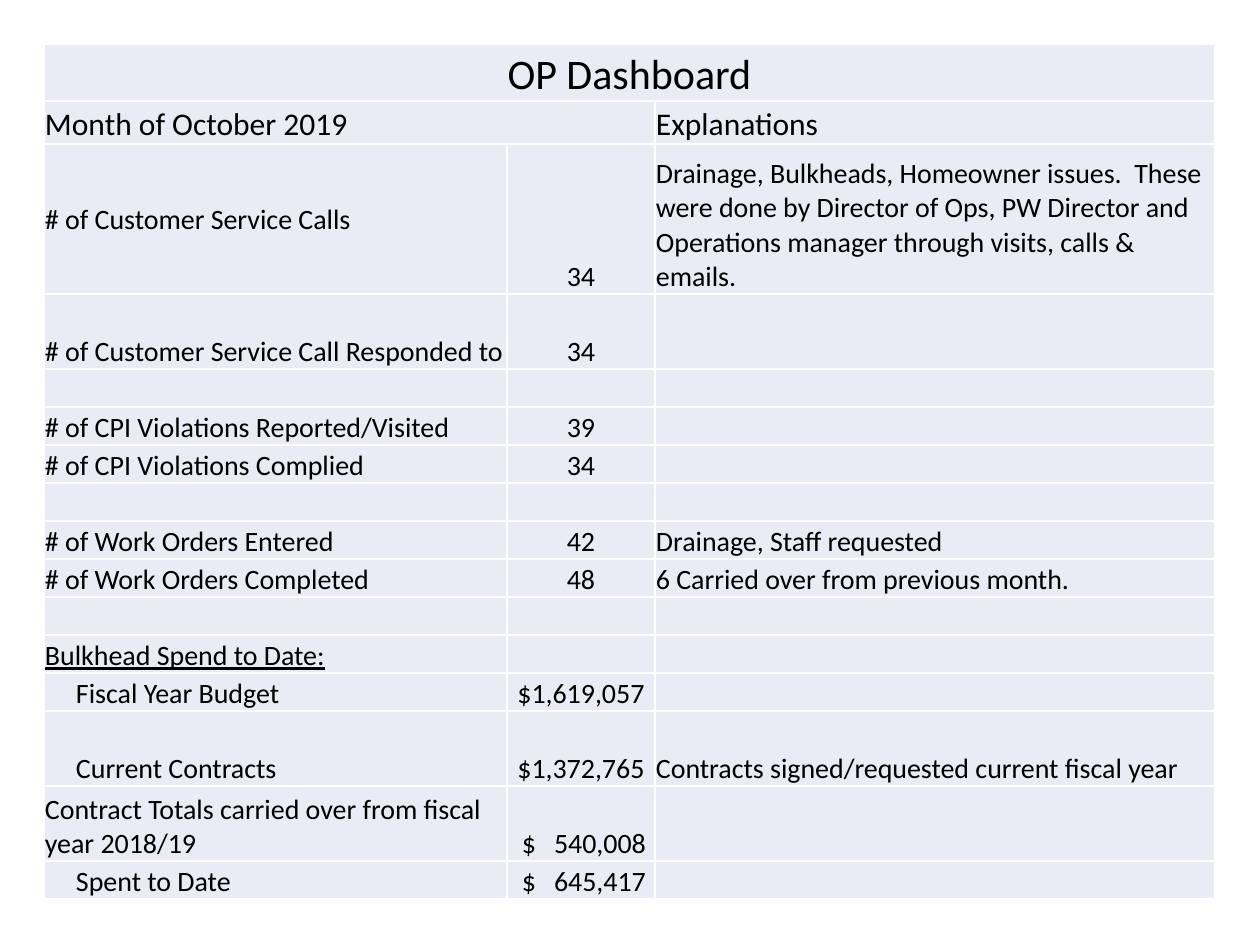
"""Build the monthly operations dashboard slide as one table."""
from lxml import etree
from pptx import Presentation
from pptx import util as u
from pptx.dml.color import RGBColor
from pptx.enum import text
from pptx.oxml import ns

PX = 914400 // 126
THEME = {
    "font": "Calibri", "ink": "000000", "fill": "E9EBF5", "rule": "FFFFFF",
    "title": 24, "head": 18, "body": 16, "line": 1,
}
LEFT, TOP = 44, 44
COLS = [463, 148, 560]
INSET, INDENT, MONEY, STOP = 1, 32, 15, 124
TALL, MID, LOW = 150, 75, 38

ROWS = [
    (57, "OP Dashboard", "", ""),
    (43, "Month of October 2019", "", "Explanations"),
    (TALL, "# of Customer Service Calls", "34",
     "Drainage, Bulkheads, Homeowner issues.  These were done by Director of Ops, "
     "PW Director and Operations manager through visits, calls & emails."),
    (MID, "# of Customer Service Call Responded to", "34", ""),
    (LOW, "", "", ""),
    (LOW, "# of CPI Violations Reported/Visited", "39", ""),
    (LOW, "# of CPI Violations Complied", "34", ""),
    (LOW, "", "", ""),
    (LOW, "# of Work Orders Entered", "42", "Drainage, Staff requested"),
    (LOW, "# of Work Orders Completed", "48", "6 Carried over from previous month."),
    (LOW, "", "", ""),
    (LOW, "Bulkhead Spend to Date:", "", ""),
    (LOW, "Fiscal Year Budget", "$1,619,057", ""),
    (MID, "Current Contracts", "$1,372,765",
     "Contracts signed/requested current fiscal year"),
    (MID, "Contract Totals carried over from fiscal year 2018/19", "$\t540,008", ""),
    (LOW, "Spent to Date", "$\t645,417", ""),
]
SPANS = [((0, 0), (0, 2)), ((1, 0), (1, 1))]
SIZES = {0: THEME["title"], 1: THEME["head"]}
INDENTED = {12, 13, 15}
UNDERLINED = (11, 0)
MIDDLE = (2, 0)


def put(obj, vals):
    for key, val in vals.items():
        setattr(obj, key, val)


def edge(cell):
    props = cell._tc.get_or_add_tcPr()
    for side in ("lnL", "lnR", "lnT", "lnB"):
        line = etree.SubElement(props, ns.qn(f"a:{side}"), w=str(u.Pt(THEME["line"])))
        fill = etree.SubElement(line, ns.qn("a:solidFill"))
        etree.SubElement(fill, ns.qn("a:srgbClr"), val=THEME["rule"])


def add_tab(para):
    tabs = etree.SubElement(para._p.get_or_add_pPr(), ns.qn("a:tabLst"))
    etree.SubElement(tabs, ns.qn("a:tab"), pos=str(STOP * PX), algn="r")


def fill_cell(cell, row, col, words):
    edge(cell)
    cell.fill.solid()
    cell.fill.fore_color.rgb = RGBColor.from_string(THEME["fill"])
    tabbed = "\t" in words
    indent = INDENT if col == 0 and row in INDENTED else MONEY if tabbed else INSET
    anchor = text.MSO_ANCHOR.MIDDLE if (row, col) == MIDDLE else text.MSO_ANCHOR.BOTTOM
    put(cell, {
        "margin_left": indent * PX, "margin_right": INSET * PX,
        "margin_top": INSET * PX, "margin_bottom": 0, "vertical_anchor": anchor,
    })
    para = cell.text_frame.paragraphs[0]
    size = SIZES.get(row, THEME["body"])
    if not words:
        end = etree.SubElement(para._p, ns.qn("a:endParaRPr"))
        end.set("sz", str(size * 100))
        return
    center = (row == 0 or col == 1) and not tabbed
    para.alignment = text.PP_ALIGN.CENTER if center else text.PP_ALIGN.LEFT
    if tabbed:
        add_tab(para)
    run = para.add_run()
    run.text = words
    put(run.font, {
        "name": THEME["font"], "size": u.Pt(size), "bold": False,
        "underline": (row, col) == UNDERLINED,
    })
    run.font.color.rgb = RGBColor.from_string(THEME["ink"])


def main():
    deck = Presentation()
    put(deck, {"slide_width": u.Inches(10), "slide_height": u.Inches(7.5)})
    slide = deck.slides.add_slide(deck.slide_layouts[6])
    high = sum(row[0] for row in ROWS)
    box = [n * PX for n in (LEFT, TOP, sum(COLS), high)]
    table = slide.shapes.add_table(len(ROWS), len(COLS), *box).table
    put(table, {"first_row": False, "horz_banding": False})
    for col, wide in enumerate(COLS):
        table.columns[col].width = wide * PX
    for row, (tall, *cells) in enumerate(ROWS):
        table.rows[row].height = tall * PX
        for col, words in enumerate(cells):
            fill_cell(table.cell(row, col), row, col, words)
    for start, stop in SPANS:
        table.cell(*start).merge(table.cell(*stop))
    deck.save("out.pptx")


if __name__ == "__main__":
    main()
